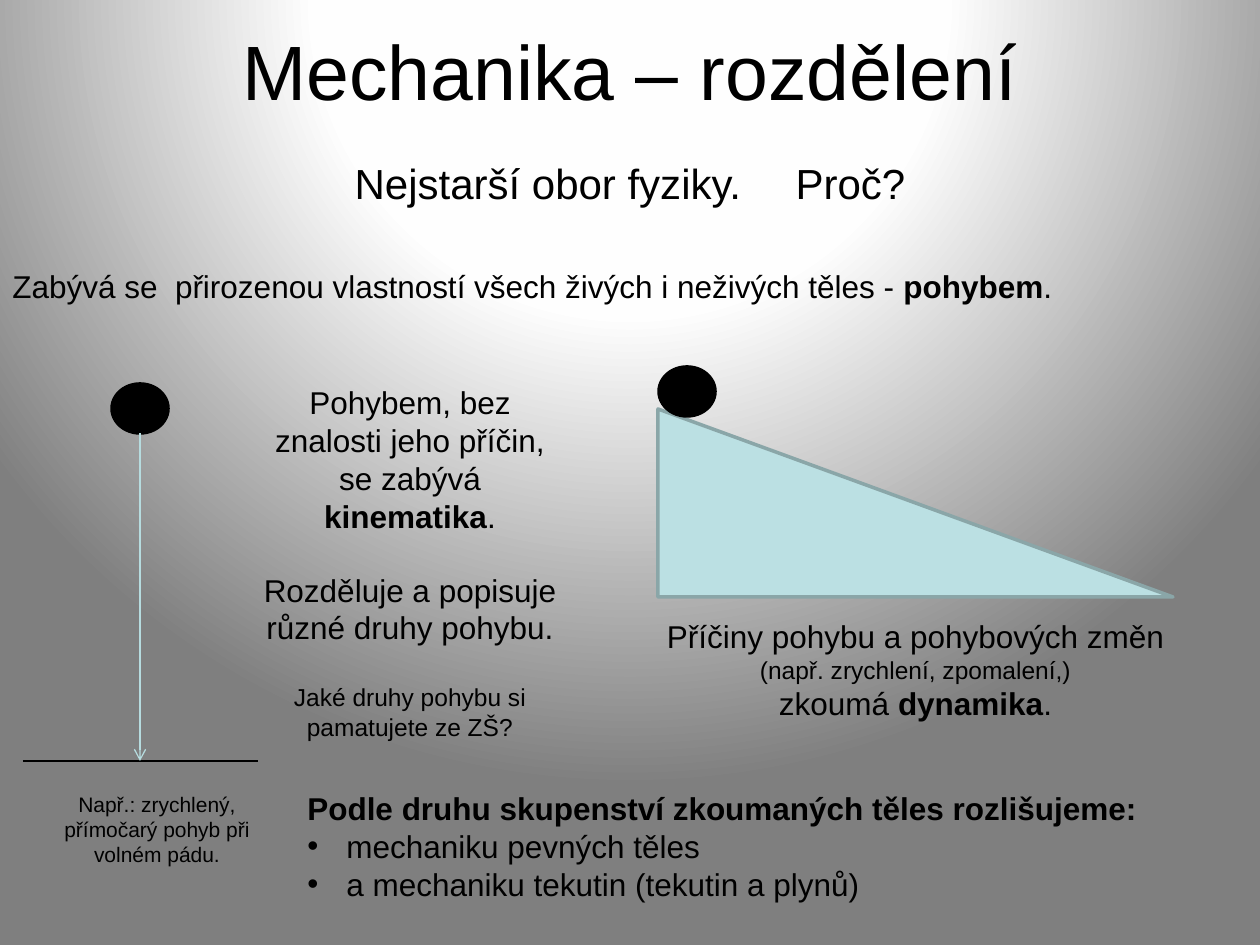
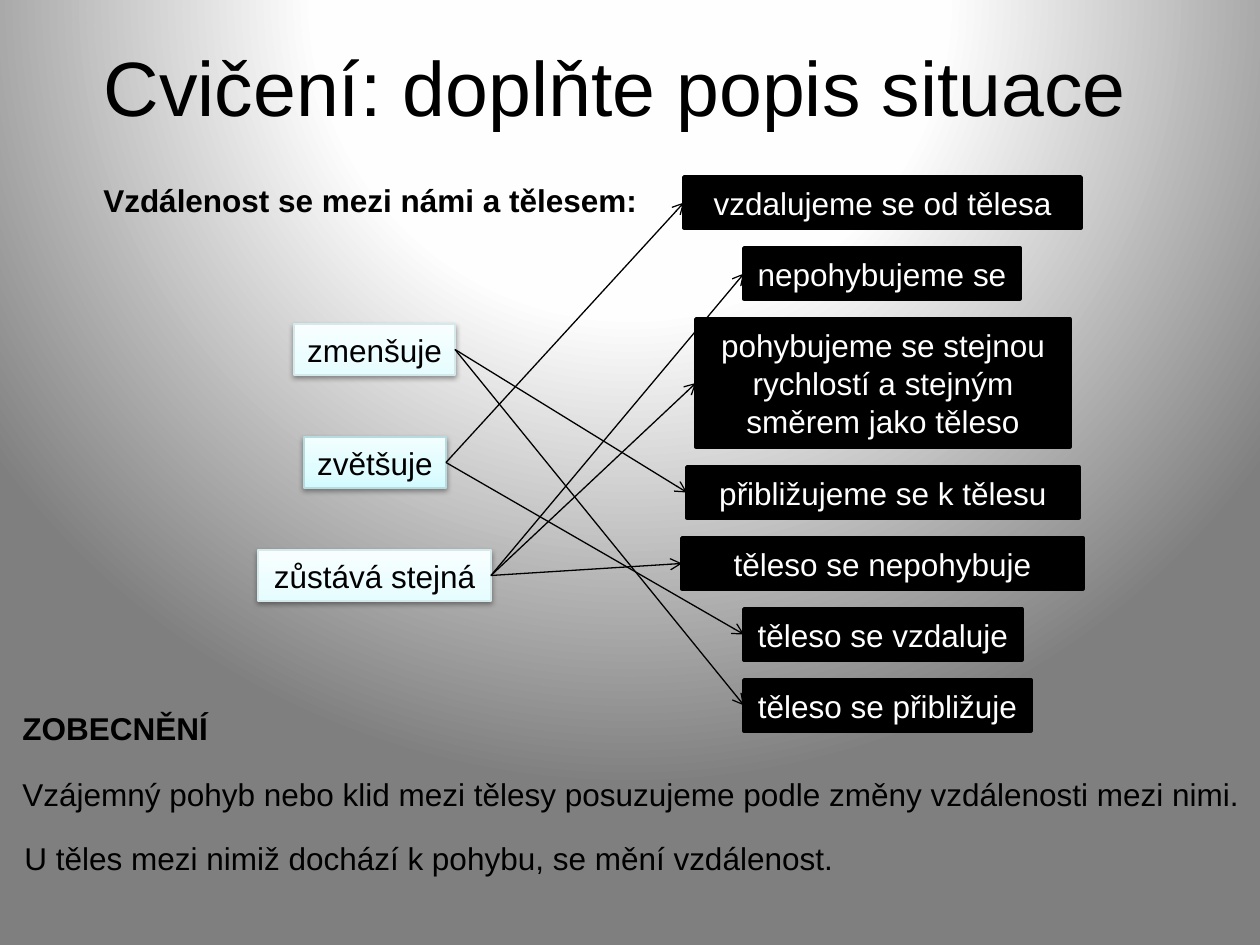
from dataclasses import dataclass
from typing import NamedTuple

from lxml import etree
from pptx import Presentation, util as u
from pptx.dml.color import RGBColor
from pptx.enum import shapes, text
from pptx.oxml.ns import qn

EMU_PER_PX = 914400 / 126
FONT = "Arial"
COLORS = {
    "black": "000000",
    "white": "FFFFFF",
    "near_white": "FEFEFE",
    "grey": "7F7F7F",
    "teal": "BBE0E3",
    "teal_edge": "8AA6A8",
    "teal_line": "B6DCDF",
    "pale_line": "D5E8EA",
}
BACKDROP = ((0, COLORS["white"]), (40, COLORS["near_white"]), (100, COLORS["grey"]))
PALE = ((0, "E6FDFF"), (35, "ECFDFF"), (100, "F8FEFF"))
AQUA = ((0, "D3FBFF"), (35, "DFFCFF"), (100, "F2FEFF"))
LEFT, CENTER = text.PP_ALIGN.LEFT, text.PP_ALIGN.CENTER


class Box(NamedTuple):
    left: int
    top: int
    width: int
    height: int


class Run(NamedTuple):
    words: str
    size: int = 18
    bold: bool = False


@dataclass
class Para:
    runs: list[Run]
    align: text.PP_ALIGN = LEFT
    before: float = 0
    bullet: bool = False


@dataclass
class Prompt:
    words: str
    left: int
    width: int
    stops: tuple
    edge: str
    matches: tuple[int, ...]


@dataclass
class Answer:
    words: str
    left: int
    width: int
    height: int = 51


def px(length: float) -> u.Emu:
    return u.Emu(round(length * EMU_PER_PX))


def rgb(name: str) -> RGBColor:
    return RGBColor.from_string(COLORS[name])


def set_gradient(owner, fill, stops, shade_tag: str, **shade_attrs: str):
    """Replace the default gradient with the given stops and return its shade."""
    fill.gradient()
    grad = owner.element.find(".//" + qn("a:gradFill"))
    for child in list(grad):
        grad.remove(child)
    stop_list = etree.SubElement(grad, qn("a:gsLst"))
    for percent, color in stops:
        stop = etree.SubElement(stop_list, qn("a:gs"), pos=str(percent * 1000))
        etree.SubElement(stop, qn("a:srgbClr"), val=color)
    return etree.SubElement(grad, qn(shade_tag), **shade_attrs)


def write(frame, paras: list[Para], color: str = "black") -> None:
    for i, para in enumerate(paras):
        p = frame.paragraphs[0] if i == 0 else frame.add_paragraph()
        p.alignment = para.align
        p.space_before = u.Pt(para.before)
        if para.bullet:
            props = p._p.get_or_add_pPr()
            props.set("marL", str(px(39)))
            props.set("indent", str(px(-39)))
            etree.SubElement(props, qn("a:buFont"), typeface=FONT)
            etree.SubElement(props, qn("a:buChar"), char="•")
        for part in para.runs:
            run = p.add_run()
            run.text = part.words
            run.font.name = FONT
            run.font.size = u.Pt(part.size)
            run.font.bold = part.bold
            run.font.color.rgb = rgb(color)


def add_text(slide, box: Box, paras: list[Para], anchor=text.MSO_ANCHOR.TOP) -> None:
    frame = slide.shapes.add_textbox(*map(px, box)).text_frame
    frame.word_wrap = True
    frame.vertical_anchor = anchor
    write(frame, paras)


def add_figure(slide, kind, box: Box, fill: str = "black", edge: str = "black", points: float = 2):
    figure = slide.shapes.add_shape(kind, *map(px, box))
    figure.shadow.inherit = False
    figure.fill.solid()
    figure.fill.fore_color.rgb = rgb(fill)
    figure.line.color.rgb = rgb(edge)
    figure.line.width = u.Pt(points)
    return figure


def add_label(slide, box: Box, words: str, color: str, edge: str, points: float):
    label = add_figure(slide, shapes.MSO_SHAPE.RECTANGLE, box, edge=edge, points=points)
    label.text_frame.word_wrap = box.height > 51
    write(label.text_frame, [Para([Run(words)], CENTER)], color)
    return label


def add_line(slide, start=(0, 0), end=(0, 0), color: str = "black", arrow: bool = True):
    line = slide.shapes.add_connector(shapes.MSO_CONNECTOR.STRAIGHT, *map(px, (*start, *end)))
    line.line.color.rgb = rgb(color)
    line.line.width = u.Pt(0.75)
    etree.SubElement(line.element.find(qn("p:spPr")), qn("a:effectLst"))
    if arrow:
        etree.SubElement(line.get_or_add_ln(), qn("a:tailEnd"), type="arrow")
    return line


def add_page(prs, title: str, title_box: Box):
    """Blank slide with the shared backdrop and title style."""
    slide = prs.slides.add_slide(prs.slide_layouts[6])
    shade = set_gradient(slide, slide.background.fill, BACKDROP, "a:path", path="circle")
    etree.SubElement(shade, qn("a:fillToRect"), l="50000", t="-80000", r="50000", b="180000")
    add_text(slide, title_box, [Para([Run(title, 44)], CENTER)], text.MSO_ANCHOR.MIDDLE)
    return slide


def build_division(prs) -> None:
    slide = add_page(prs, "Mechanika – rozdělení", Box(0, 20, 1260, 100))
    add_text(slide, Box(0, 151, 1260, 72),
             [Para([Run("Nejstarší obor fyziky.\tProč?", 24)], CENTER)])
    add_text(slide, Box(0, 261, 1260, 51), [Para([
        Run("Zabývá se  přirozenou vlastností všech živých i neživých těles - "),
        Run("pohybem", bold=True), Run(".")])])

    # Kinematics: free fall onto the ground
    add_text(slide, Box(246, 377, 328, 378), [
        Para([Run("Pohybem, bez znalosti jeho příčin,")], CENTER),
        Para([Run("se zabývá "), Run("kinematika", bold=True), Run(".")], CENTER),
        Para([Run("Rozděluje a popisuje různé druhy pohybu.")], CENTER, before=20.7),
        Para([Run("Jaké druhy pohybu si pamatujete ze ZŠ?", 14)], CENTER, before=20.7),
    ])
    add_figure(slide, shapes.MSO_SHAPE.OVAL, Box(112, 384, 56, 49))
    add_line(slide, (23, 761), (258, 761), arrow=False)
    add_line(slide, (140, 433), (140, 761), "teal_line")
    add_text(slide, Box(23, 785, 268, 89), [
        Para([Run("Např.: zrychlený, přímočarý pohyb při volném pádu.", 12)], CENTER)])

    # Dynamics: ball on an inclined plane
    add_figure(slide, shapes.MSO_SHAPE.RIGHT_TRIANGLE, Box(658, 409, 515, 188),
               "teal", "teal_edge")
    add_figure(slide, shapes.MSO_SHAPE.OVAL, Box(659, 367, 56, 49))
    add_text(slide, Box(649, 611, 533, 118), [
        Para([Run("Příčiny pohybu a pohybových změn")], CENTER),
        Para([Run("(např. zrychlení, zpomalení,)", 14)], CENTER),
        Para([Run("zkoumá "), Run("dynamika", bold=True), Run(".")], CENTER),
    ])

    # Division by state of matter
    add_text(slide, Box(295, 783, 896, 127), [
        Para([Run("Podle druhu skupenství zkoumaných těles rozlišujeme:", bold=True)]),
        Para([Run("mechaniku pevných těles")], bullet=True),
        Para([Run("a mechaniku tekutin (tekutin a plynů)")], bullet=True),
    ])


PROMPTS = [
    Prompt("zmenšuje", 294, 161, PALE, "pale_line", (3, 6)),
    Prompt("zvětšuje", 304, 142, AQUA, "teal_line", (0, 5)),
    Prompt("zůstává stejná", 258, 233, PALE, "pale_line", (1, 2, 4)),
]
ANSWERS = [
    Answer("vzdalujeme se od tělesa", 684, 397),
    Answer("nepohybujeme se", 744, 276),
    Answer("pohybujeme se stejnou rychlostí a stejným směrem jako těleso", 696, 374, 128),
    Answer("přibližujeme se k tělesu", 687, 392),
    Answer("těleso se nepohybuje", 682, 401),
    Answer("těleso se vzdaluje", 744, 278),
    Answer("těleso se přibližuje", 744, 287),
]
PROMPT_TOP, PROMPT_STEP = 324, 113
ANSWER_TOP, ANSWER_GAP = 177, 20
RIGHT_SITE, LEFT_SITE = 3, 1


def add_prompt(slide, prompt: Prompt, top: int):
    label = add_label(slide, Box(prompt.left, top, prompt.width, 51), prompt.words,
                      "black", prompt.edge, 0.75)
    set_gradient(label, label.fill, prompt.stops, "a:lin", ang="16200000", scaled="1")
    effects = label.element.find(".//" + qn("a:effectLst"))
    shadow = etree.SubElement(effects, qn("a:outerShdw"), blurRad="40000", dist="20000",
                              dir="5400000", rotWithShape="0")
    tint = etree.SubElement(shadow, qn("a:srgbClr"), val=COLORS["black"])
    etree.SubElement(tint, qn("a:alpha"), val="38000")
    return label


def build_exercise(prs) -> None:
    slide = add_page(prs, "Cvičení: doplňte popis situace", Box(54, 37, 1123, 98))

    # Heading and generalisation
    for words, bold, box in (
        ("Vzdálenost se mezi námi a tělesem:", True, Box(91, 175, 577, 51)),
        ("ZOBECNĚNÍ", True, Box(10, 703, 256, 51)),
        ("Vzájemný pohyb nebo klid mezi tělesy posuzujeme podle změny vzdálenosti mezi nimi.",
         False, Box(10, 769, 1250, 51)),
        ("U těles mezi nimiž dochází k pohybu, se mění vzdálenost.",
         False, Box(12, 833, 1176, 51)),
    ):
        add_text(slide, box, [Para([Run(words, bold=bold)])])

    # Answers stacked with equal gaps
    answer_labels = []
    top = ANSWER_TOP
    for answer in ANSWERS:
        box = Box(answer.left, top, answer.width, answer.height)
        answer_labels.append(add_label(slide, box, answer.words, "white", "black", 2))
        top += answer.height + ANSWER_GAP

    # Prompts, each joined to its matching answers
    for row, prompt in enumerate(PROMPTS):
        prompt_label = add_prompt(slide, prompt, PROMPT_TOP + row * PROMPT_STEP)
        for match in prompt.matches:
            arrow = add_line(slide)
            arrow.begin_connect(prompt_label, RIGHT_SITE)
            arrow.end_connect(answer_labels[match], LEFT_SITE)


def main() -> None:
    prs = Presentation()
    prs.slide_width, prs.slide_height = px(1260), px(945)
    build_division(prs)
    build_exercise(prs)
    prs.save("out.pptx")


if __name__ == "__main__":
    main()
